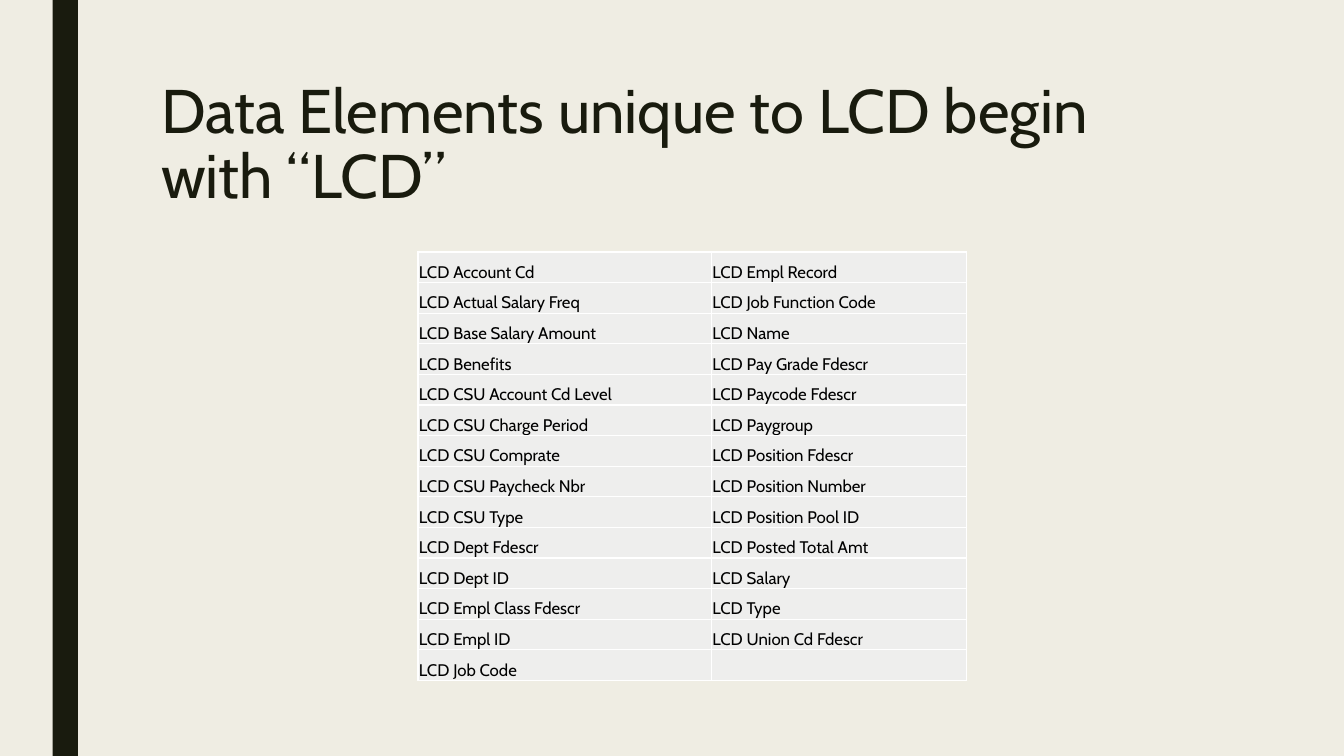
from itertools import zip_longest

from lxml.etree import SubElement
from pptx import Presentation
from pptx.dml.color import RGBColor
from pptx.enum.shapes import MSO_SHAPE
from pptx.enum.text import MSO_ANCHOR
from pptx.oxml.ns import qn
from pptx.util import Pt

CREAM = RGBColor(0xEF, 0xED, 0xE3)
DARK = RGBColor(0x19, 0x1B, 0x0E)
CELL_GRAY = RGBColor(0xEE, 0xEE, 0xED)
WHITE = RGBColor(0xFF, 0xFF, 0xFF)
BLACK = RGBColor(0, 0, 0)
FONT = "Cabin"
CELL_SIZE = Pt(12)

LEFT_ELEMENTS = [
    "LCD Account Cd", "LCD Actual Salary Freq", "LCD Base Salary Amount",
    "LCD Benefits", "LCD CSU Account Cd Level", "LCD CSU Charge Period",
    "LCD CSU Comprate", "LCD CSU Paycheck Nbr", "LCD CSU Type",
    "LCD Dept Fdescr", "LCD Dept ID", "LCD Empl Class Fdescr",
    "LCD Empl ID", "LCD Job Code",
]
RIGHT_ELEMENTS = [
    "LCD Empl Record", "LCD Job Function Code", "LCD Name",
    "LCD Pay Grade Fdescr", "LCD Paycode Fdescr", "LCD Paygroup",
    "LCD Position Fdescr", "LCD Position Number", "LCD Position Pool ID",
    "LCD Posted Total Amt", "LCD Salary", "LCD Type", "LCD Union Cd Fdescr",
]


def add_run(p, text, size, color):
    r = p.add_run()
    r.text = text
    r.font.name = FONT
    r.font.size = size
    r.font.color.rgb = color


def add_bar(s):
    sp = s.shapes.add_shape(MSO_SHAPE.RECTANGLE, Pt(37.6), 0, Pt(18), Pt(540))
    sp.shadow.inherit = False
    sp.fill.solid()
    sp.fill.fore_color.rgb = DARK
    sp.line.fill.background()


def add_title(s, text):
    tf = s.shapes.add_textbox(Pt(108), Pt(54), Pt(756), Pt(117)).text_frame
    tf.word_wrap = True
    tf.vertical_anchor = MSO_ANCHOR.TOP
    p = tf.paragraphs[0]
    p.line_spacing = 0.89
    add_run(p, text, Pt(44), DARK)


def set_borders(cell, color, width):
    tc_pr = cell._tc.get_or_add_tcPr()
    for side in ("a:lnL", "a:lnR", "a:lnT", "a:lnB"):
        ln = SubElement(tc_pr, qn(side), w=str(width))
        fill = SubElement(ln, qn("a:solidFill"))
        SubElement(fill, qn("a:srgbClr"), val=str(color))


def fill_cell(cell, text):
    set_borders(cell, WHITE, Pt(1))
    cell.fill.solid()
    cell.fill.fore_color.rgb = CELL_GRAY
    cell.vertical_anchor = MSO_ANCHOR.BOTTOM
    cell.margin_left = cell.margin_right = cell.margin_top = Pt(0.7)
    cell.margin_bottom = 0
    p = cell.text_frame.paragraphs[0]
    if text:
        add_run(p, text, CELL_SIZE, BLACK)
    else:
        # Keeps the empty cell from stretching its row
        SubElement(p._p, qn("a:endParaRPr"), sz=str(int(CELL_SIZE.pt * 100)))


def add_element_table(s, rows):
    row_height = Pt(21.86)
    widths = [Pt(209.6), Pt(182.2)]
    table = s.shapes.add_table(len(rows), len(widths), Pt(298.6), Pt(180),
                               sum(widths), row_height * len(rows)).table
    table.first_row = table.horz_banding = False
    for column, width in zip(table.columns, widths):
        column.width = width
    for row, texts in zip(table.rows, rows):
        row.height = row_height
        for cell, text in zip(row.cells, texts):
            fill_cell(cell, text)


def main():
    prs = Presentation()
    prs.slide_width, prs.slide_height = Pt(960), Pt(540)
    s = prs.slides.add_slide(prs.slide_layouts[6])
    s.background.fill.solid()
    s.background.fill.fore_color.rgb = CREAM
    add_bar(s)
    add_title(s, "Data Elements unique to LCD begin with “LCD”")
    add_element_table(s, list(zip_longest(LEFT_ELEMENTS, RIGHT_ELEMENTS, fillvalue="")))
    prs.save("out.pptx")


if __name__ == "__main__":
    main()
